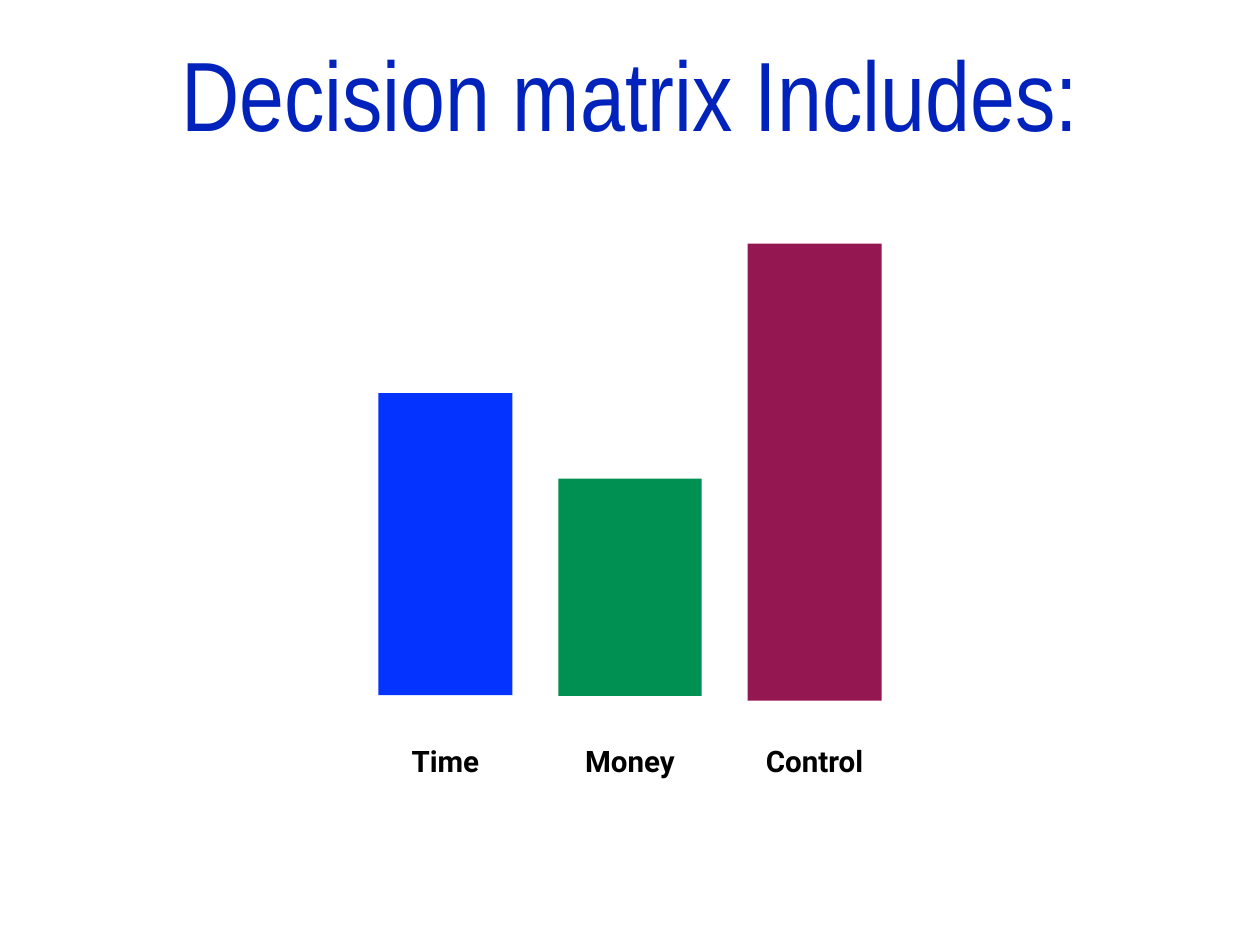
from pptx import Presentation
from pptx.dml.color import RGBColor
from pptx.enum.shapes import MSO_SHAPE
from pptx.enum.text import MSO_ANCHOR, PP_ALIGN
from pptx.util import Pt


def color(hex_code):
    return RGBColor.from_string(hex_code)


def add_text(words, center, top, width, height, font_name, size, hex_code, bold=False):
    box = slide.shapes.add_textbox(Pt(center - width / 2), Pt(top), Pt(width), Pt(height))
    frame = box.text_frame
    frame.word_wrap = True
    frame.vertical_anchor = MSO_ANCHOR.MIDDLE
    frame.margin_left = frame.margin_right = Pt(4)
    frame.margin_top = frame.margin_bottom = Pt(4)
    frame.text = words
    paragraph = frame.paragraphs[0]
    paragraph.alignment = PP_ALIGN.CENTER
    font = paragraph.runs[0].font
    font.name = font_name
    font.size = Pt(size)
    font.bold = bold
    font.color.rgb = color(hex_code)


presentation = Presentation()
presentation.slide_width = Pt(1024)
presentation.slide_height = Pt(768)
slide = presentation.slides.add_slide(presentation.slide_layouts[6])
slide.background.fill.solid()
slide.background.fill.fore_color.rgb = color("FFFFFF")

# Title
middle = 512
add_text("Decision matrix Includes:", middle, 20, 874, 109.5, "Arial Narrow", 80, "0222BC")

# Criteria: label, label width, bar top, bar width, bar height, bar colour
criteria = [
    ("Time", 66, 319.5, 109, 245.5, "0433FF"),
    ("Money", 86, 389, 116.5, 176.5, "009051"),
    ("Control", 94, 198, 109, 371.5, "941751"),
]
spacing = 150
for index, (criterion, label_width, top, width, height, hex_code) in enumerate(criteria):
    center = middle + (index - 1) * spacing
    bar = slide.shapes.add_shape(
        MSO_SHAPE.RECTANGLE, Pt(center - width / 2), Pt(top), Pt(width), Pt(height))
    bar.shadow.inherit = False
    bar.fill.solid()
    bar.fill.fore_color.rgb = color(hex_code)
    bar.line.fill.background()
    add_text(criterion, center, 600, label_width, 36, "Roboto", 24, "000000", bold=True)

presentation.save("out.pptx")
